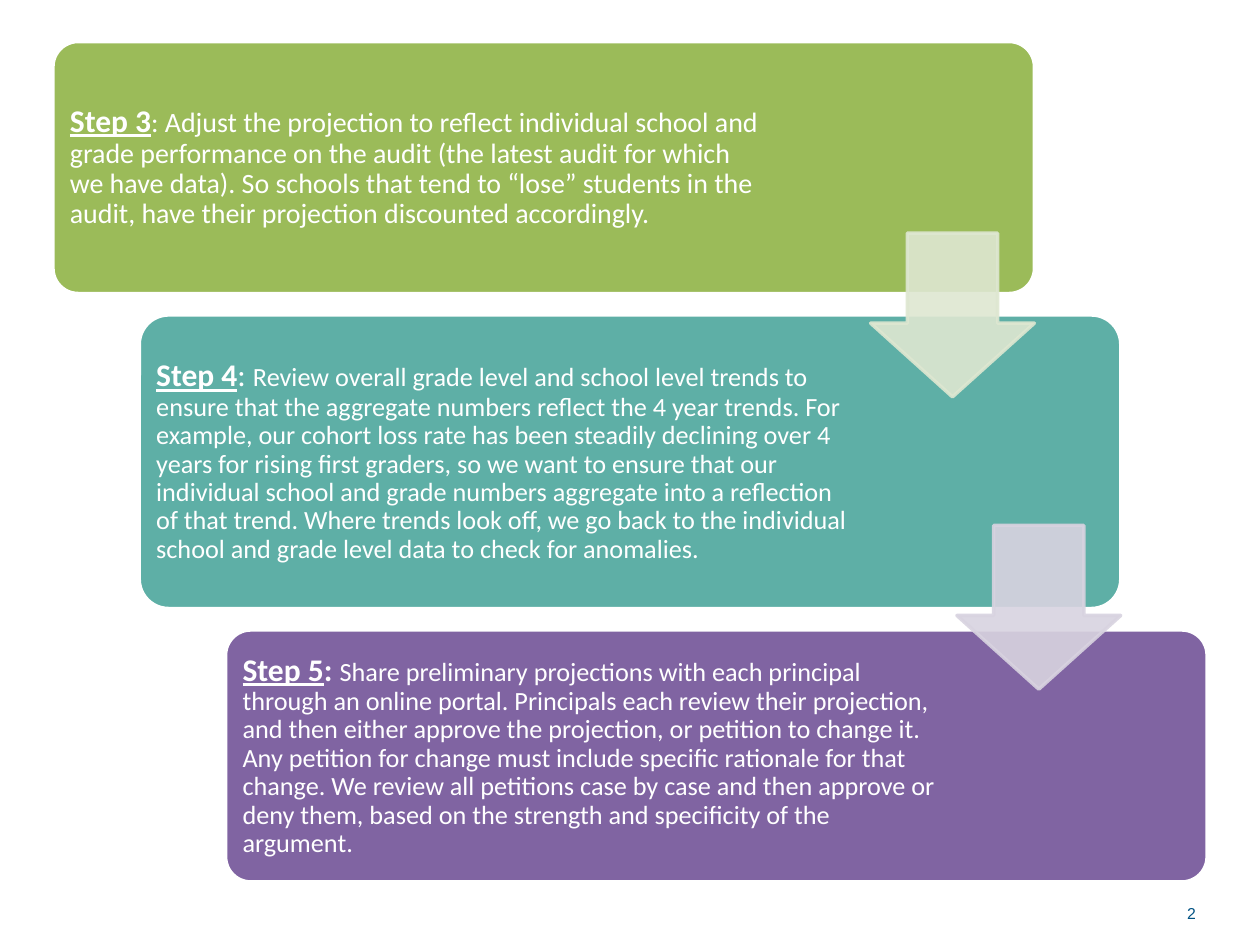
from lxml.etree import SubElement
from pptx import Presentation
from pptx.dml.color import RGBColor
from pptx.enum.shapes import MSO_SHAPE
from pptx.enum.text import MSO_ANCHOR, PP_ALIGN
from pptx.oxml.ns import qn
from pptx.util import Inches, Pt

STEPS = [
    {"fill": "9BBB59", "height": 2, "text_width": 5.63, "runs": [
        ("Step 3", "title"),
        (": Adjust the projection to reflect individual school and grade performance on the audit "
         "(the latest audit for which we have data). So schools that tend to “lose” students in the "
         "audit, have their projection discounted accordingly.", "lead")]},
    {"fill": "5EAFA6", "height": 2.33, "text_width": 5.67, "runs": [
        ("Step 4", "title"), (": ", "colon"),
        ("Review overall grade level and school level trends to ensure that the aggregate numbers "
         "reflect the 4 year trends. For example, our cohort loss rate has been steadily declining "
         "over 4 years for rising first graders, so we want to ensure that our individual school and "
         "grade numbers aggregate into a reflection of that trend. Where trends look off, we go back "
         "to the individual school and grade level data to check for anomalies.", "body")]},
    {"fill": "8064A2", "height": 2, "text_width": 5.69, "runs": [
        ("Step 5", "title"), (": ", "bold_colon"),
        ("Share preliminary projections with each principal through an online portal. Principals "
         "each review their projection, and then either approve the projection, or petition to "
         "change it. Any petition for change must include specific rationale for that change. We "
         "review all petitions case by case and then approve or deny them, based on the strength "
         "and specificity of the argument.", "body")]},
]
ARROWS = [("DEE7D1", 1.85), ("D8D3E0", 4.17)]
PAGE = "2"

THEME = {
    "white": "FFFFFF",
    "arrow_alpha": 90,
    "title": {"size": 18, "bold": True, "underline": True},
    "colon": {"size": 18, "bold": False, "underline": False},
    "bold_colon": {"size": 18, "bold": True, "underline": False},
    "lead": {"size": 16, "bold": False, "underline": False},
    "body": {"size": 15, "bold": False, "underline": False},
    "page": {"size": 9, "name": "Arial", "color": "005283"},
}
LEFT, TOP, WIDTH = 0.42, 0.33, 7.79
INDENT, GAP, ARROW = 0.685, 0.17, 1.3
PAD, INSET = 0.065, 0.07


def add_run(p, text, style):
    fmt = {"name": "Calibri", "color": THEME["white"], **THEME[style]}
    r = p.add_run()
    r.text = text
    r.font.color.rgb = RGBColor.from_string(fmt.pop("color"))
    fmt["size"] = Pt(fmt["size"])
    for key, value in fmt.items():
        setattr(r.font, key, value)


def add_shape(s, kind, box, adjustments, fill, line, alpha=None):
    sp = s.shapes.add_shape(kind, *map(Inches, box))
    sp.shadow.inherit = False
    for i, value in enumerate(adjustments):
        sp.adjustments[i] = value
    sp.fill.solid()
    sp.line.width = Pt(2)
    for color, value in ((sp.fill.fore_color, fill), (sp.line.color, line)):
        color.rgb = RGBColor.from_string(value)
    if alpha:
        for clr in sp.element.spPr.iter(qn("a:srgbClr")):
            SubElement(clr, qn("a:alpha"), val=str(alpha * 1000))


def add_text(s, box, runs, inset=None, **fmt):
    tf = s.shapes.add_textbox(*map(Inches, box)).text_frame
    tf.word_wrap = True
    tf.vertical_anchor = MSO_ANCHOR.MIDDLE
    if inset is not None:
        for side in ("left", "top", "right", "bottom"):
            setattr(tf, f"margin_{side}", Inches(inset))
    p = tf.paragraphs[0]
    for key, value in fmt.items():
        setattr(p, key, value)
    for text, style in runs:
        add_run(p, text, style)


def main():
    prs = Presentation()
    prs.slide_width, prs.slide_height = Inches(10), Inches(7.5)
    s = prs.slides.add_slide(prs.slide_layouts[6])
    add_text(s, (7.17, 7.08, 2.42, 0.33), [(PAGE, "page")], alignment=PP_ALIGN.RIGHT)

    top = TOP
    for i, step in enumerate(STEPS):
        left, height = LEFT + i * INDENT, step["height"]
        add_shape(s, MSO_SHAPE.ROUNDED_RECTANGLE, (left, top, WIDTH, height), [0.1],
                  step["fill"], THEME["white"])
        add_text(s, (left + PAD, top + PAD, step["text_width"], height - 2 * PAD),
                 step["runs"], INSET, line_spacing=0.9)
        top += height + GAP

    for i, (color, arrow_top) in enumerate(ARROWS):
        left = LEFT + i * INDENT + WIDTH - ARROW
        add_shape(s, MSO_SHAPE.DOWN_ARROW, (left, arrow_top, ARROW, ARROW), [0.55, 0.45],
                  color, color, THEME["arrow_alpha"])

    prs.save("out.pptx")


if __name__ == "__main__":
    main()
